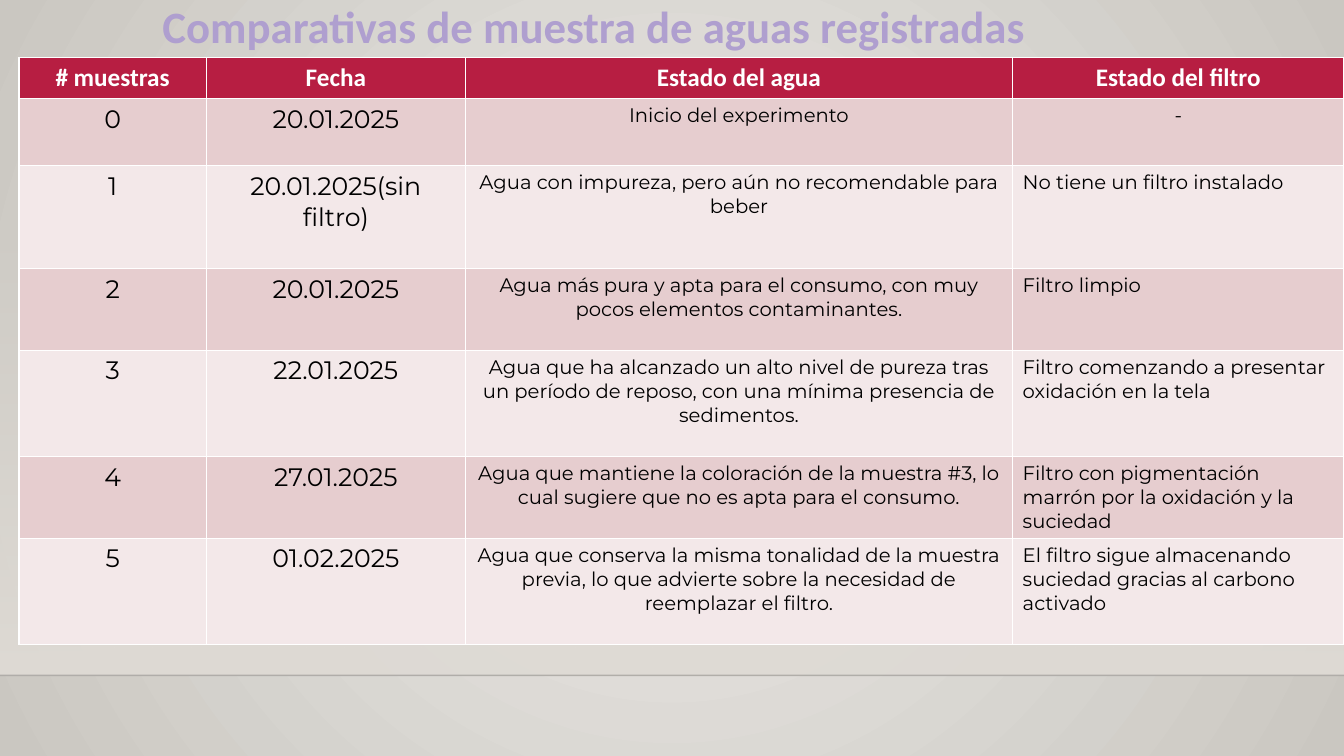
from dataclasses import dataclass

from lxml.etree import SubElement
from pptx import Presentation
from pptx.dml.color import RGBColor
from pptx.enum.shapes import MSO_CONNECTOR, MSO_SHAPE
from pptx.enum.text import MSO_ANCHOR, MSO_AUTO_SIZE, PP_ALIGN
from pptx.oxml.ns import qn
from pptx.util import Cm, Pt

TITLE = "Comparativas de muestra de aguas registradas"
HEADERS = ["# muestras", "Fecha", "Estado del agua", "Estado del filtro"]
SAMPLES = [
    ("0", "20.01.2025", "Inicio del experimento", "-"),
    ("1", "20.01.2025(sin filtro)",
     "Agua con impureza, pero aún no recomendable para beber",
     "No tiene un filtro instalado"),
    ("2", "20.01.2025",
     "Agua más pura y apta para el consumo, con muy pocos elementos contaminantes.",
     "Filtro limpio"),
    ("3", "22.01.2025",
     "Agua que ha alcanzado un alto nivel de pureza tras un período de reposo, "
     "con una mínima presencia de sedimentos.",
     "Filtro comenzando a presentar oxidación en la tela"),
    ("4", "27.01.2025",
     "Agua que mantiene la coloración de la muestra #3, lo cual sugiere que no es "
     "apta para el consumo.",
     "Filtro con pigmentación marrón por la oxidación y la suciedad"),
    ("5", "01.02.2025",
     "Agua que conserva la misma tonalidad de la muestra previa, lo que advierte "
     "sobre la necesidad de reemplazar el filtro.",
     "El filtro sigue almacenando suciedad gracias al carbono activado"),
]
COLUMN_WIDTHS = [4.72, 6.53, 13.79, 8.35]
ROW_HEIGHTS = [1.04, 1.69, 2.59, 2.06, 2.68, 2.06, 2.68]
SLIDE_WIDTH, SLIDE_HEIGHT = 33.87, 19.05
WALL_TOP, WALL_BOTTOM = 5.61, 17.02


@dataclass(frozen=True)
class Theme:
    heading_font: str = "Calibri"
    body_font: str = "Montserrat"
    title_size: int = 32
    large_size: int = 18
    small_size: int = 14
    title: str = "AF9FCF"
    header: str = "B71E42"
    header_text: str = "FFFFFF"
    text: str = "000000"
    bands: tuple = ("E6CDCF", "F3E8E9")
    background: tuple = ("ECEAE7", "CAC7C1")
    wall: str = "DFDBD5"
    edge: str = "000001"


THEME = Theme()


def rgb(color):
    return RGBColor.from_string(color)


def set_font(paragraph, name, size, color, bold=False):
    font = paragraph.font
    font.name, font.size, font.bold = name, Pt(size), bold
    font.color.rgb = rgb(color)


def set_gradient(fill, colors):
    fill.gradient()
    for stop, color in zip(fill.gradient_stops, colors):
        stop.color.rgb = rgb(color)


def set_alpha(color_element, percent):
    SubElement(color_element, qn("a:alpha"), val=str(percent * 1000))


def paint_background(slide):
    """Fill the slide with a gradient that spreads from its centre."""
    set_gradient(slide.background.fill, THEME.background)
    gradient = slide.background._cSld.find(".//" + qn("a:gradFill"))
    gradient.remove(gradient.find(qn("a:lin")))
    circle = SubElement(gradient, qn("a:path"), path="circle")
    SubElement(circle, qn("a:fillToRect"), l="50000", t="50000", r="50000", b="50000")


def add_wall(slide):
    """Add the band that fades in downwards and the faint line at its foot."""
    wall = slide.shapes.add_shape(MSO_SHAPE.RECTANGLE, 0, Cm(WALL_TOP),
                                  Cm(SLIDE_WIDTH), Cm(WALL_BOTTOM - WALL_TOP))
    wall.shadow.inherit = False
    wall.line.fill.background()
    set_gradient(wall.fill, (THEME.wall, THEME.wall))
    wall.fill.gradient_angle = 270
    set_alpha(wall._element.spPr.find(".//" + qn("a:srgbClr")), 0)

    edge = slide.shapes.add_connector(MSO_CONNECTOR.STRAIGHT, 0, Cm(WALL_BOTTOM),
                                      Cm(SLIDE_WIDTH), Cm(WALL_BOTTOM))
    edge.line.width = Pt(1)
    edge.line.color.rgb = rgb(THEME.edge)
    set_alpha(edge._element.spPr.find(".//" + qn("a:srgbClr")), 20)
    SubElement(edge._element.spPr, qn("a:effectLst"))


def write_title(slide):
    title = slide.shapes.title
    title.left, title.top, title.width, title.height = Cm(3.84), 0, Cm(26.67), Cm(2.92)
    frame = title.text_frame
    frame.text = TITLE
    frame.vertical_anchor = MSO_ANCHOR.TOP
    frame.auto_size = MSO_AUTO_SIZE.NONE
    paragraph = frame.paragraphs[0]
    paragraph.alignment = PP_ALIGN.LEFT
    paragraph.line_spacing = 0.9
    set_font(paragraph, THEME.heading_font, THEME.title_size, THEME.title, True)


def fill_cell(cell, text, row, column):
    cell.text = text
    cell.fill.solid()
    paragraph = cell.text_frame.paragraphs[0]
    is_filter_note = row > 1 and column == 3
    paragraph.alignment = PP_ALIGN.LEFT if is_filter_note else PP_ALIGN.CENTER
    if row == 0:
        cell.fill.fore_color.rgb = rgb(THEME.header)
        set_font(paragraph, THEME.heading_font, THEME.large_size, THEME.header_text, True)
    else:
        cell.fill.fore_color.rgb = rgb(THEME.bands[(row - 1) % 2])
        size = THEME.large_size if column < 2 else THEME.small_size
        set_font(paragraph, THEME.body_font, size, THEME.text)


def add_samples_table(slide):
    rows = [HEADERS, *SAMPLES]
    table = slide.shapes.add_table(len(rows), len(HEADERS), Cm(0.48), Cm(1.45),
                                   Cm(sum(COLUMN_WIDTHS)), Cm(sum(ROW_HEIGHTS))).table
    for column, width in zip(table.columns, COLUMN_WIDTHS):
        column.width = Cm(width)
    for row, height in zip(table.rows, ROW_HEIGHTS):
        row.height = Cm(height)
    for row_index, texts in enumerate(rows):
        for column_index, text in enumerate(texts):
            fill_cell(table.cell(row_index, column_index), text, row_index, column_index)


def main():
    presentation = Presentation()
    presentation.slide_width = Cm(SLIDE_WIDTH)
    presentation.slide_height = Cm(SLIDE_HEIGHT)
    slide = presentation.slides.add_slide(presentation.slide_layouts[5])
    paint_background(slide)
    add_wall(slide)
    write_title(slide)
    add_samples_table(slide)
    presentation.save("out.pptx")


if __name__ == "__main__":
    main()
